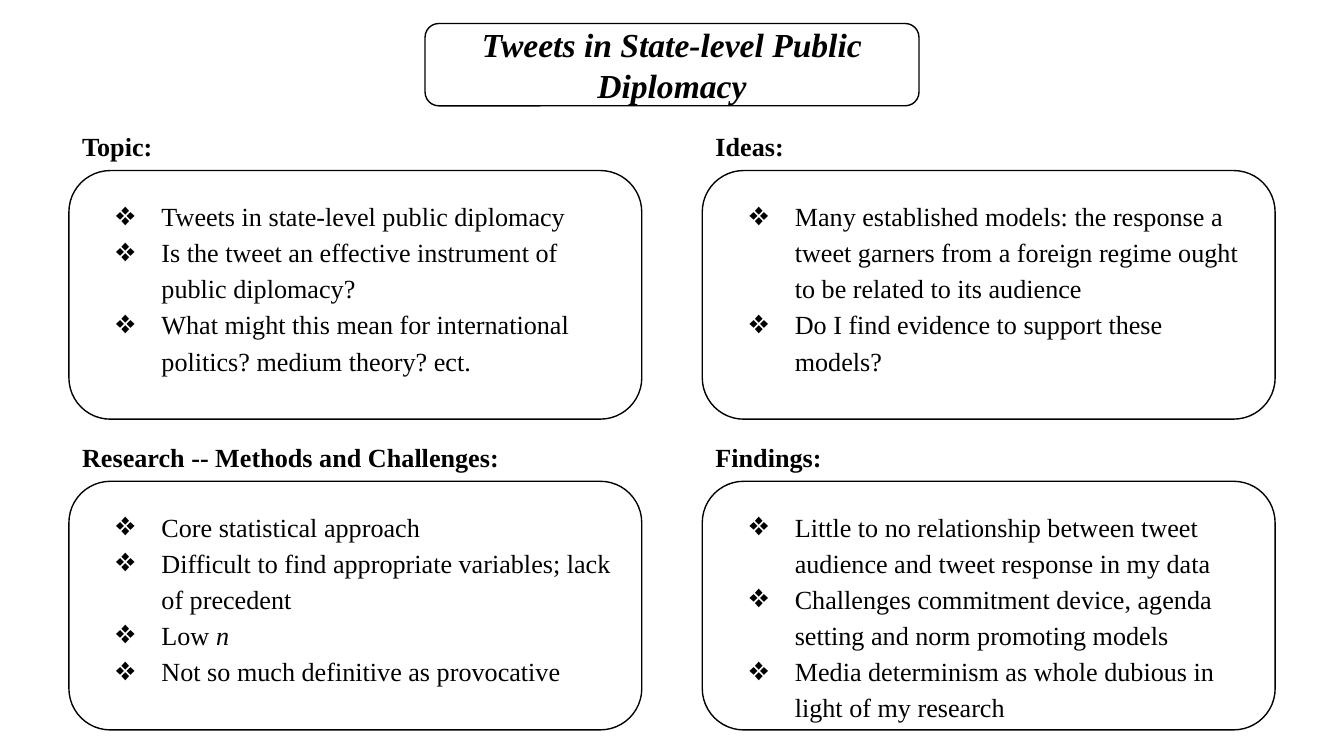
from lxml.etree import SubElement
from pptx import Presentation
from pptx.dml.color import RGBColor
from pptx.enum.shapes import MSO_SHAPE
from pptx.enum.text import MSO_ANCHOR, PP_ALIGN
from pptx.oxml.ns import qn
from pptx.util import Emu, Pt

PX = 5715  # 160 px to the inch
BLACK = RGBColor(0, 0, 0)
FONT = "Times New Roman"
INSET = 16

presentation = Presentation()
presentation.slide_width = Emu(1600 * PX)
presentation.slide_height = Emu(900 * PX)
slide = presentation.slides.add_slide(presentation.slide_layouts[6])


def add_box(left, top, width, height, outlined=True):
    """Add a rounded outline or a plain text box and return its text frame."""
    bounds = [Emu(value * PX) for value in (left, top, width, height)]
    if outlined:
        shape = slide.shapes.add_shape(MSO_SHAPE.ROUNDED_RECTANGLE, *bounds)
        shape.shadow.inherit = False
        shape.fill.background()
        shape.line.color.rgb = BLACK
        shape.line.width = Pt(0.75)
    else:
        shape = slide.shapes.add_textbox(*bounds)
    frame = shape.text_frame
    frame.word_wrap = True
    frame.vertical_anchor = MSO_ANCHOR.TOP
    frame.margin_left = frame.margin_right = Emu(INSET * PX)
    frame.margin_top = frame.margin_bottom = Emu(INSET * PX)
    return frame


def style(paragraph, size, bold=False, italic=False, align=PP_ALIGN.LEFT):
    paragraph.alignment = align
    font = paragraph.font
    font.name, font.size, font.color.rgb = FONT, Pt(size), BLACK
    font.bold, font.italic = bold, italic


# Title
title = add_box(506, 28, 588, 98)
title.vertical_anchor = MSO_ANCHOR.MIDDLE
title.text = "Tweets in State-level Public Diplomacy"
style(title.paragraphs[0], 18, bold=True, italic=True, align=PP_ALIGN.CENTER)

# Sections in reading order: heading, heading width, bullets as lists of (text, italic)
SECTIONS = [
    ("Topic:", 200, [
        [("Tweets in state-level public diplomacy", False)],
        [("Is the tweet an effective instrument of public diplomacy?", False)],
        [("What might this mean for international politics? medium theory? ect.", False)],
    ]),
    ("Ideas:", 200, [
        [("Many established models: the response a tweet garners from a foreign "
          "regime ought to be related to its audience", False)],
        [("Do I find evidence to support these models?", False)],
    ]),
    ("Research -- Methods and Challenges:", 630, [
        [("Core statistical approach", False)],
        [("Difficult to find appropriate variables; lack of precedent", False)],
        [("Low ", False), ("n", True)],
        [("Not so much definitive as provocative", False)],
    ]),
    ("Findings:", 200, [
        [("Little to no relationship between tweet audience and tweet response "
          "in my data", False)],
        [("Challenges commitment device, agenda setting and norm promoting models", False)],
        [("Media determinism as whole dubious in light of my research", False)],
    ]),
]

# Two by two grid of headings and bullet panels
for index, (heading, heading_width, bullets) in enumerate(SECTIONS):
    row, column = divmod(index, 2)
    left = 82 + column * 754
    top = 139 + row * 370

    label = add_box(left, top, heading_width, 50, outlined=False)
    label.text = heading
    style(label.paragraphs[0], 14, bold=True)

    panel = add_box(left, top + 64, 682, 296)
    for number, runs in enumerate(bullets):
        paragraph = panel.add_paragraph() if number else panel.paragraphs[0]
        properties = paragraph._p.get_or_add_pPr()
        properties.set("marL", str(80 * PX))
        properties.set("indent", str(-55 * PX))
        bullet_color = SubElement(properties, qn("a:buClr"))
        SubElement(bullet_color, qn("a:srgbClr"), val=str(BLACK))
        SubElement(properties, qn("a:buFont"), typeface=FONT)
        SubElement(properties, qn("a:buChar"), char="❖")
        paragraph.line_spacing = 1.15
        style(paragraph, 14)
        for text, italic in runs:
            run = paragraph.add_run()
            run.text = text
            if italic:
                run.font.italic = True

presentation.save("out.pptx")
